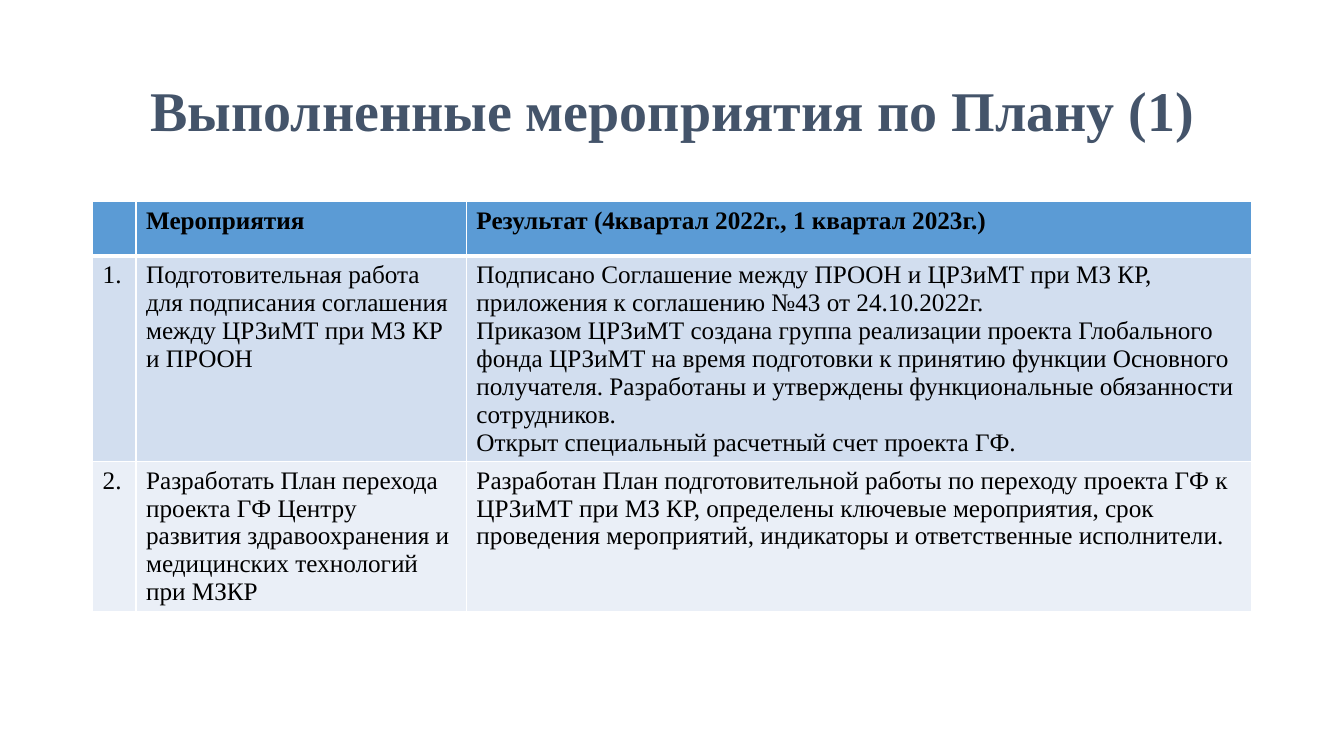
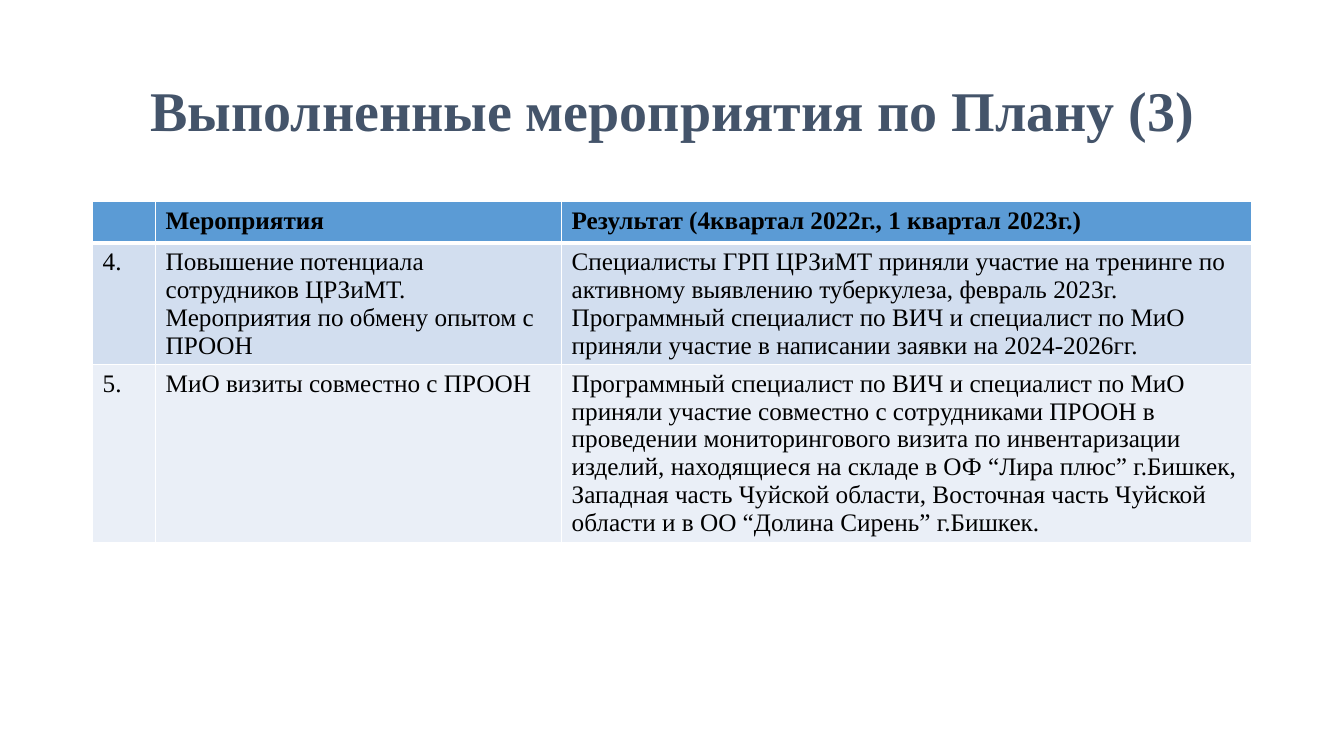
import pptx
import pptx.util
import pptx.dml.color
import pptx.enum.text
import pptx.oxml.ns
import lxml.etree

Pt = pptx.util.Pt
COLORS = {
    "title": "44546A",
    "text": "000000",
    "border": "FFFFFF",
    "header": "5B9BD5",
    "odd_row": "D2DEEF",
    "even_row": "EAEFF7",
}
FONT = "Times New Roman"
LEFT, WIDTH = 66.2, 828
HEADINGS = ["", "Мероприятия", "Результат (4квартал 2022г., 1 квартал 2023г.)"]

# Each cell is a string; a line break in it starts a new paragraph
PLAN_PARTS = [
    {
        "title": "Выполненные мероприятия по Плану (1)",
        "widths": [31, 236, 561],
        "heights": [39, 146, 106],
        "rows": [
            ["1.",
             "Подготовительная работа для подписания соглашения между ЦРЗиМТ при МЗ КР и ПРООН",
             "Подписано Соглашение между ПРООН и ЦРЗиМТ при МЗ КР, приложения к соглашению "
             "№43 от 24.10.2022г.\n"
             "Приказом ЦРЗиМТ создана группа реализации проекта Глобального фонда ЦРЗиМТ на время "
             "подготовки к принятию функции Основного получателя. Разработаны и утверждены "
             "функциональные обязанности сотрудников.\n"
             "Открыт специальный расчетный счет проекта ГФ."],
            ["2.",
             "Разработать План перехода проекта ГФ Центру развития здравоохранения и "
             "медицинских технологий при МЗКР",
             "Разработан План подготовительной работы по переходу проекта ГФ к ЦРЗиМТ при МЗ КР, "
             "определены ключевые мероприятия, срок проведения мероприятий, индикаторы и "
             "ответственные исполнители."],
        ],
    },
    {
        "title": "Выполненные мероприятия по Плану (3)",
        "widths": [45, 290, 493],
        "heights": [29.5, 86, 126],
        "rows": [
            ["4.",
             "Повышение потенциала сотрудников ЦРЗиМТ. Мероприятия по обмену опытом с ПРООН",
             "Специалисты ГРП ЦРЗиМТ приняли участие на тренинге по активному выявлению "
             "туберкулеза, февраль 2023г.\n"
             "Программный специалист по ВИЧ и специалист по МиО приняли участие в написании "
             "заявки на 2024-2026гг."],
            ["5.",
             "МиО визиты совместно с ПРООН",
             "Программный специалист по ВИЧ и специалист по МиО приняли участие совместно с "
             "сотрудниками ПРООН в проведении мониторингового визита по инвентаризации изделий, "
             "находящиеся на складе в ОФ “Лира плюс” г.Бишкек, Западная часть Чуйской области, "
             "Восточная часть Чуйской области и в ОО “Долина Сирень” г.Бишкек."],
        ],
    },
]


def add_run(paragraph, text, size, color, bold):
    run = paragraph.add_run()
    run.text = text
    run.font.name = FONT
    run.font.size = Pt(size)
    run.font.bold = bold
    run.font.color.rgb = pptx.dml.color.RGBColor.from_string(COLORS[color])


def add_borders(cell, top, bottom):
    properties = cell._tc.get_or_add_tcPr()
    qn = pptx.oxml.ns.qn
    for side, weight in (("L", 1), ("R", 1), ("T", top), ("B", bottom)):
        line = lxml.etree.SubElement(properties, qn(f"a:ln{side}"), w=str(Pt(weight)))
        fill = lxml.etree.SubElement(line, qn("a:solidFill"))
        lxml.etree.SubElement(fill, qn("a:srgbClr"), val=COLORS["border"])


presentation = pptx.Presentation()
presentation.slide_width = Pt(960)
presentation.slide_height = Pt(540)
title_only = presentation.slide_layouts[5]

for part in PLAN_PARTS:
    slide = presentation.slides.add_slide(title_only)

    # Title
    title = slide.shapes.title
    title.left, title.top, title.width, title.height = Pt(LEFT), Pt(28.8), Pt(WIDTH), Pt(104.4)
    title.text_frame.auto_size = pptx.enum.text.MSO_AUTO_SIZE.NONE
    title.text_frame.vertical_anchor = pptx.enum.text.MSO_ANCHOR.MIDDLE
    heading = title.text_frame.paragraphs[0]
    heading.alignment = pptx.enum.text.PP_ALIGN.CENTER
    heading.line_spacing = 0.9
    add_run(heading, part["title"], 40, "title", True)

    # Table of activities and results
    rows = [HEADINGS] + part["rows"]
    activities = slide.shapes.add_table(
        len(rows), len(HEADINGS), Pt(LEFT), Pt(144), Pt(WIDTH), Pt(sum(part["heights"]))
    ).table
    for column, width in zip(activities.columns, part["widths"]):
        column.width = Pt(width)

    for row_index, texts in enumerate(rows):
        activities.rows[row_index].height = Pt(part["heights"][row_index])
        is_header = row_index == 0
        band = "header" if is_header else ("odd_row" if row_index % 2 else "even_row")
        for column_index, text in enumerate(texts):
            cell = activities.cell(row_index, column_index)
            add_borders(cell, top=3 if row_index == 1 else 1, bottom=3 if is_header else 1)
            cell.fill.solid()
            cell.fill.fore_color.rgb = pptx.dml.color.RGBColor.from_string(COLORS[band])
            if not text:
                continue
            for line_index, line in enumerate(text.split("\n")):
                frame = cell.text_frame
                paragraph = frame.add_paragraph() if line_index else frame.paragraphs[0]
                add_run(paragraph, line, 18, "text", is_header)

presentation.save("out.pptx")
